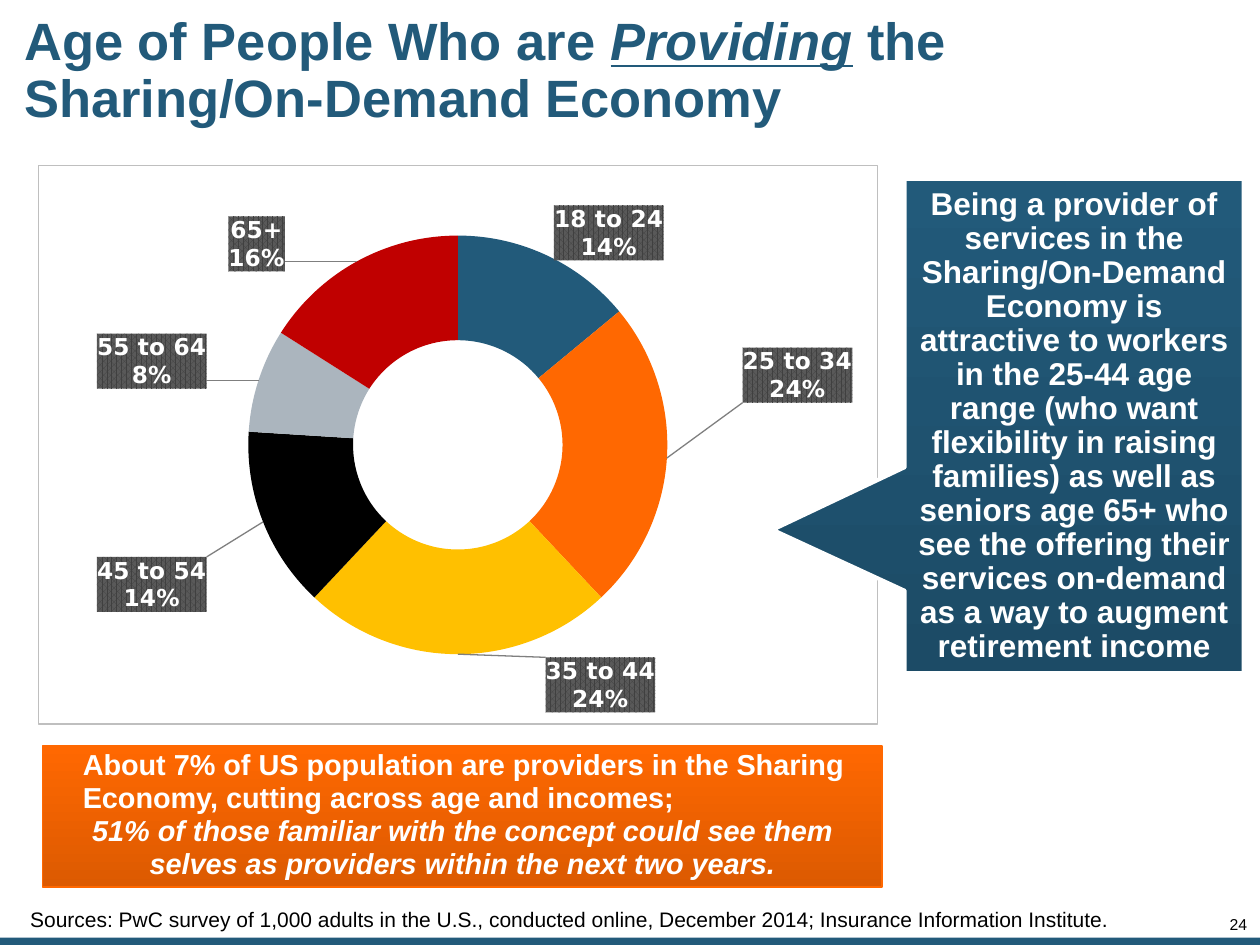
import math
from dataclasses import dataclass
from typing import NamedTuple

import pptx
import pptx.chart.data
import pptx.dml.color
import pptx.enum.chart
import pptx.enum.shapes
import pptx.enum.text
import pptx.oxml
import pptx.oxml.ns
import pptx.util
from pptx.util import Cm

ALIGN = pptx.enum.text.PP_ALIGN
SHAPE = pptx.enum.shapes.MSO_SHAPE
NS = pptx.oxml.ns.nsdecls("c", "a")


@dataclass(frozen=True)
class Theme:
    font: str = "Arial"
    chart_font: str = "DejaVu Sans"
    blue: str = "225A7A"
    deep_blue: str = "1C4B66"
    orange: str = "FF6801"
    deep_orange: str = "DC5A01"
    white: str = "FFFFFF"
    black: str = "000000"
    frame: str = "BFBFBF"
    leader: str = "7F7F7F"
    label_dark: str = "404040"
    label_light: str = "595959"
    title: float = 30
    callout: float = 18
    banner: float = 16.5
    label: float = 13.3
    source: float = 12
    axis: float = 10
    number: float = 9


class Box(NamedTuple):
    left: float
    top: float
    width: float
    height: float

    def emu(self) -> tuple:
        return tuple(Cm(v) for v in self)


class AgeGroup(NamedTuple):
    name: str
    share: int
    color: str
    label_x: float
    label_y: float


class Panel(NamedTuple):
    kind: int
    box: Box
    start: str
    end: str
    line: str
    line_width: float
    insets: tuple


THEME = Theme()
HOLE = 0.5
PLOT = (0.25, 0.125, 0.5, 0.75)
GROUPS = [
    AgeGroup("18 to 24", 14, THEME.blue, 0.68, 0.12),
    AgeGroup("25 to 34", 24, THEME.orange, 0.905, 0.375),
    AgeGroup("35 to 44", 24, "FFC000", 0.67, 0.93),
    AgeGroup("45 to 54", 14, THEME.black, 0.135, 0.75),
    AgeGroup("55 to 64", 8, "ABB5BE", 0.135, 0.35),
    AgeGroup("65+", 16, "C00000", 0.26, 0.14),
]
CALLOUT = Panel(SHAPE.RECTANGULAR_CALLOUT, Box(18.24, 3.61, 6.83, 9.96),
                THEME.blue, THEME.deep_blue, THEME.white, 2.25, (0.25, 0.25, 0.25, 0.25))
BANNER = Panel(SHAPE.RECTANGLE, Box(0.86, 15.04, 16.92, 2.84),
               THEME.orange, THEME.deep_orange, THEME.orange, 1, (0.25, 0.13, 0.25, 0.18))


def rgb(value: str) -> pptx.dml.color.RGBColor:
    return pptx.dml.color.RGBColor.from_string(value)


def style(font, size: float, color: str, bold: bool = False, name: str = THEME.font) -> None:
    font.name, font.size, font.bold = name, pptx.util.Pt(size), bold
    font.color.rgb = rgb(color)


def set_insets(tf, insets: tuple) -> None:
    tf.margin_left, tf.margin_top, tf.margin_right, tf.margin_bottom = map(Cm, insets)


def write(p, text: str, size: float, color: str, bold: bool = False,
          align=ALIGN.LEFT, spacing: float = 1.0) -> None:
    p.text = text
    p.alignment, p.line_spacing = align, spacing
    for r in p.runs:
        style(r.font, size, color, bold)


def add_text(s, box: Box, text: str, size: float, align, spacing: float, insets: tuple) -> None:
    tf = s.shapes.add_textbox(*box.emu()).text_frame
    tf.word_wrap = True
    set_insets(tf, insets)
    write(tf.paragraphs[0], text, size, THEME.black, align=align, spacing=spacing)


def add_panel(s, panel: Panel):
    sp = s.shapes.add_shape(panel.kind, *panel.box.emu())
    sp.shadow.inherit = False
    sp.fill.gradient()
    sp.fill.gradient_angle = 270
    for stop, color in zip(sp.fill.gradient_stops, (panel.start, panel.end)):
        stop.color.rgb = rgb(color)
    sp.line.color.rgb = rgb(panel.line)
    sp.line.width = pptx.util.Pt(panel.line_width)
    tf = sp.text_frame
    tf.word_wrap = True
    tf.vertical_anchor = pptx.enum.text.MSO_ANCHOR.MIDDLE
    set_insets(tf, panel.insets)
    return sp


def layout_xml(values: dict) -> str:
    inner = "".join(f'<c:{k} val="{v}"/>' for k, v in values.items())
    return f"<c:layout><c:manualLayout>{inner}</c:manualLayout></c:layout>"


def solid_line(color: str, width: int) -> str:
    return f'<a:ln w="{width}"><a:solidFill><a:srgbClr val="{color}"/></a:solidFill></a:ln>'


def label_xml(groups: list[AgeGroup]) -> str:
    look = (
        '<c:spPr><a:pattFill prst="pct75">'
        f'<a:fgClr><a:srgbClr val="{THEME.label_dark}"/></a:fgClr>'
        f'<a:bgClr><a:srgbClr val="{THEME.label_light}"/></a:bgClr></a:pattFill></c:spPr>'
        f'<c:txPr><a:bodyPr/><a:p><a:pPr><a:defRPr sz="{round(THEME.label * 100)}" b="1">'
        f'<a:solidFill><a:srgbClr val="{THEME.white}"/></a:solidFill>'
        f'<a:latin typeface="{THEME.chart_font}"/></a:defRPr></a:pPr></a:p></c:txPr>'
        '<c:showLegendKey val="0"/><c:showVal val="0"/><c:showCatName val="1"/>'
        '<c:showSerName val="0"/><c:showPercent val="1"/><c:showBubbleSize val="0"/>'
        "<c:separator>\n</c:separator>"
    )
    ring = (1 + HOLE) / 4
    total, passed, labels = sum(g.share for g in groups), 0, ""
    for i, g in enumerate(groups):
        angle = 2 * math.pi * (passed + g.share / 2) / total
        passed += g.share
        x = g.label_x - 0.5 - PLOT[2] * ring * math.sin(angle)
        y = g.label_y - 0.5 + PLOT[3] * ring * math.cos(angle)
        place = layout_xml({"x": round(x, 4), "y": round(y, 4)})
        labels += f'<c:dLbl><c:idx val="{i}"/>{place}{look}</c:dLbl>'
    return (f'<c:dLbls {NS}>{labels}{look}<c:showLeaderLines val="1"/><c:leaderLines><c:spPr>'
            f"{solid_line(THEME.leader, 9525)}</c:spPr></c:leaderLines></c:dLbls>")


def add_age_chart(s, box: Box, groups: list[AgeGroup]) -> None:
    data = pptx.chart.data.CategoryChartData()
    data.categories = [g.name for g in groups]
    data.add_series("Series 1", [g.share for g in groups])
    chart = s.shapes.add_chart(pptx.enum.chart.XL_CHART_TYPE.DOUGHNUT, *box.emu(), data).chart
    chart.has_legend = chart.has_title = False
    style(chart.font, THEME.axis, THEME.black, name=THEME.chart_font)
    series = chart.plots[0].series[0]
    for i, g in enumerate(groups):
        fill = series.points[i].format.fill
        fill.solid()
        fill.fore_color.rgb = rgb(g.color)
    qn, parse_xml = pptx.oxml.ns.qn, pptx.oxml.parse_xml
    series._element.find(qn("c:cat")).addprevious(parse_xml(label_xml(groups)))
    root = chart._chartSpace.find(qn("c:chart"))
    area = root.find(qn("c:plotArea"))
    for old in area.findall(qn("c:layout")):
        area.remove(old)
    values = {"layoutTarget": "inner", "xMode": "edge", "yMode": "edge",
              **dict(zip("xywh", PLOT))}
    area.insert(0, parse_xml(layout_xml(values).replace("<c:layout>", f"<c:layout {NS}>", 1)))
    root.addnext(parse_xml(f"<c:spPr {NS}><a:noFill/>{solid_line(THEME.frame, 9525)}</c:spPr>"))


def add_title(s) -> None:
    sp = s.shapes.title
    sp.left, sp.top, sp.width, sp.height = Box(0.36, 0.25, 21.29, 2.39).emu()
    tf = sp.text_frame
    tf.auto_size = pptx.enum.text.MSO_AUTO_SIZE.NONE
    tf.vertical_anchor = pptx.enum.text.MSO_ANCHOR.MIDDLE
    set_insets(tf, (0.13,) * 4)
    p = tf.paragraphs[0]
    for text in ("Age of People Who are ", "Providing", " the Sharing/On-Demand Economy"):
        p.add_run().text = text
    p.alignment, p.line_spacing = ALIGN.LEFT, 0.9
    for r in p.runs:
        style(r.font, THEME.title, THEME.blue, True)
    p.runs[1].font.italic = p.runs[1].font.underline = True


def main() -> None:
    prs = pptx.Presentation()
    prs.slide_width, prs.slide_height = Cm(25.4), Cm(19.05)
    s = prs.slides.add_slide(prs.slide_layouts[5])

    strip = s.shapes.add_shape(SHAPE.RECTANGLE, *Box(0, 18.9, 25.4, 0.15).emu())
    strip.shadow.inherit = False
    strip.fill.solid()
    strip.fill.fore_color.rgb = rgb(THEME.blue)
    strip.line.fill.background()

    add_text(s, Box(23.9, 18.49, 1.24, 0.33), "24", THEME.number, ALIGN.RIGHT, 0.85, (0,) * 4)
    add_title(s)
    add_text(s, Box(0.36, 18.14, 22.56, 0.76),
             "Sources: PwC survey of 1,000 adults in the U.S., conducted online, "
             "December 2014; Insurance Information Institute.",
             THEME.source, ALIGN.LEFT, 1.0, (0.25, 0.13, 0.25, 0.13))
    add_age_chart(s, Box(0.76, 3.33, 16.94, 11.28), GROUPS)

    callout = add_panel(s, CALLOUT)
    callout.adjustments[0], callout.adjustments[1] = -0.89, 0.21
    write(callout.text_frame.paragraphs[0],
          "Being a provider of services in the Sharing/On-Demand Economy is attractive to "
          "workers in the 25-44 age range (who want flexibility in raising families) as well "
          "as seniors age 65+ who see the offering their services on-demand as a way to "
          "augment retirement income",
          THEME.callout, THEME.white, True, ALIGN.CENTER, 0.9)

    tf = add_panel(s, BANNER).text_frame
    p = tf.paragraphs[0]
    p._p.get_or_add_pPr().set("marL", str(Cm(0.56)))
    write(p, "About 7% of US population are providers in the Sharing Economy, "
          "cutting across age and incomes;", THEME.banner, THEME.white, True, spacing=0.95)
    p = tf.add_paragraph()
    write(p, "51% of those familiar with the concept could see them selves as providers "
          "within the next two years.", THEME.banner, THEME.white, True, ALIGN.CENTER, 0.95)
    p.runs[0].font.italic = True

    prs.save("out.pptx")


if __name__ == "__main__":
    main()
